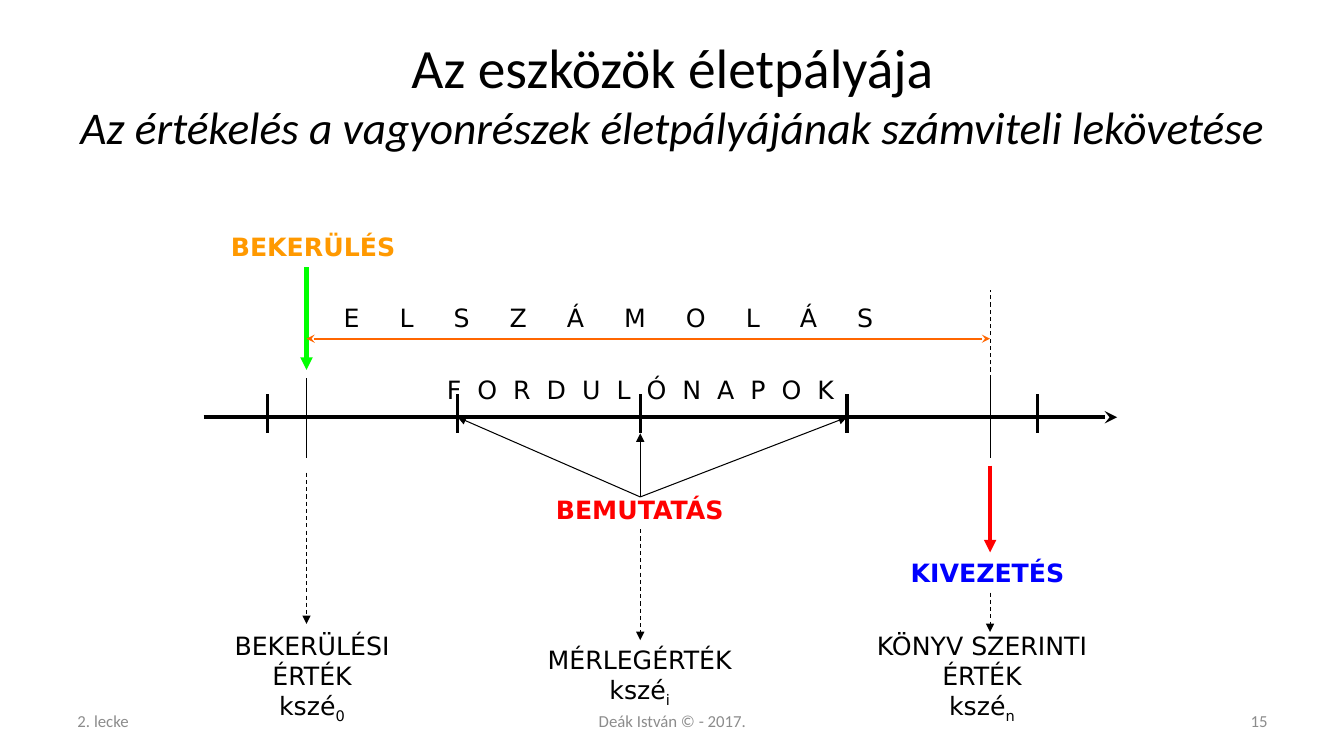
"""Builds a slide with the timeline of an asset and its valuation."""
import dataclasses

import lxml.etree
import pptx
import pptx.dml.color
import pptx.enum.dml
import pptx.enum.shapes
import pptx.enum.text
import pptx.oxml.ns
import pptx.util

Inches = pptx.util.Inches
Align = pptx.enum.text.PP_ALIGN
Anchor = pptx.enum.text.MSO_ANCHOR
qn = pptx.oxml.ns.qn


@dataclasses.dataclass(frozen=True)
class Theme:
    """Colours, fonts and type sizes."""
    black: str = "000000"
    grey: str = "8C8C8C"
    amber: str = "FF9900"
    orange: str = "FF6600"
    green: str = "00FF00"
    blue: str = "0000FF"
    red: str = "FF0000"
    head: str = "Calibri"
    body: str = "DejaVu Sans"
    title: float = 39.6
    sub: float = 32.4
    text: float = 18
    foot: float = 12
    thin: float = 0.75
    mid: float = 1.5
    tick: float = 2.25
    thick: float = 3


class Board:
    """Draws styled elements on one slide."""

    def __init__(self, deck, theme):
        self.theme = theme
        self.slide = deck.slides.add_slide(deck.slide_layouts[5])

    def style(self, para, font, size, tint, align, bold=False):
        """Formats a whole paragraph."""
        para.alignment = align
        para.font.name = font
        para.font.size = pptx.util.Pt(size)
        para.font.bold = bold
        para.font.color.rgb = pptx.dml.color.RGBColor.from_string(tint)

    def title(self, main, sub):
        """Fills the title placeholder with a heading and a subheading."""
        theme = self.theme
        shape = self.slide.shapes.title
        shape.left, shape.top = Inches(0.67), Inches(0.3)
        shape.width, shape.height = Inches(12), Inches(1.25)
        frame = shape.text_frame
        frame.word_wrap = True
        frame.auto_size = pptx.enum.text.MSO_AUTO_SIZE.NONE
        frame.vertical_anchor = Anchor.MIDDLE
        para = frame.paragraphs[0]
        self.style(para, theme.head, theme.title, theme.black, Align.CENTER)
        first = para.add_run()
        first.text = main
        first.font.size = pptx.util.Pt(theme.title)
        para.add_line_break()
        second = para.add_run()
        second.text = sub
        second.font.size = pptx.util.Pt(theme.sub)
        second.font.italic = True

    def box(self, left, top, width, height, wrap=False):
        """Adds an empty text box and returns its frame."""
        shape = self.slide.shapes.add_textbox(
            Inches(left), Inches(top), Inches(width), Inches(height))
        shape.text_frame.word_wrap = wrap
        return shape.text_frame

    def foot(self, left, width, text, align):
        """Adds one part of the footer."""
        theme = self.theme
        frame = self.box(left, 6.95, width, 0.4, wrap=True)
        frame.vertical_anchor = Anchor.MIDDLE
        para = frame.paragraphs[0]
        para.add_run().text = text
        self.style(para, theme.head, theme.foot, theme.grey, align)

    def label(self, left, top, width, text, tint):
        """Adds a bold stage name."""
        para = self.box(left, top, width, 0.4).paragraphs[0]
        para.add_run().text = text
        self.style(para, self.theme.body, self.theme.text, tint, Align.CENTER, True)

    def spread(self, left, top, width, word, gap, align):
        """Adds a word with wide letter spacing in points."""
        theme = self.theme
        para = self.box(left, top, width, 0.4, wrap=True).paragraphs[0]
        run = para.add_run()
        run.text = " ".join(word)
        run.font._element.set("spc", str(round(gap * 100)))
        self.style(para, theme.body, theme.text, theme.black, align)

    def value(self, left, top, width, lines, index):
        """Adds a value name over its indexed symbol."""
        theme = self.theme
        frame = self.box(left, top, width, 0.1 + 0.3 * (len(lines) + 1))
        for count, line in enumerate([*lines, "kszé"]):
            para = frame.add_paragraph() if count else frame.paragraphs[0]
            para.add_run().text = line
            self.style(para, theme.body, theme.text, theme.black, Align.CENTER)
        low = para.add_run()
        low.text = index
        low.font._element.set("baseline", "-25000")

    def line(self, start, end, tint=Theme.black, width=Theme.thin,
             head=None, tail=None, dash=False):
        """Adds a straight line with optional arrowheads."""
        link = self.slide.shapes.add_connector(
            pptx.enum.shapes.MSO_CONNECTOR.STRAIGHT,
            *(Inches(value) for value in (*start, *end)))
        link.line.color.rgb = pptx.dml.color.RGBColor.from_string(tint)
        link.line.width = pptx.util.Pt(width)
        if dash:
            link.line.dash_style = pptx.enum.dml.MSO_LINE.DASH
        props = link._element.spPr
        for tag, kind in (("a:headEnd", head), ("a:tailEnd", tail)):
            if kind:
                lxml.etree.SubElement(props.find(qn("a:ln")), qn(tag), type=kind)
        lxml.etree.SubElement(props, qn("a:effectLst"))


def main():
    """Builds and saves the slide."""
    deck = pptx.Presentation()
    deck.slide_width, deck.slide_height = Inches(13.33), Inches(7.5)
    theme = Theme()
    board = Board(deck, theme)
    entry, centre, leave, axis = 3.04, 6.35, 9.82, 4.14

    board.title("Az eszközök életpályája",
                "Az értékelés a vagyonrészek életpályájának számviteli lekövetése")
    board.foot(0.67, 3.11, "2. lecke", Align.LEFT)
    board.foot(4.56, 4.22, "Deák István © - 2017.", Align.CENTER)
    board.foot(9.56, 3.11, "15", Align.RIGHT)

    board.line((2.02, axis), (11.08, axis), width=theme.thick, tail="stealth")
    for x in (2.65, 4.54, centre, 8.4, 10.29):
        board.line((x, 3.91), (x, 4.3), width=theme.tick)
    for x in (entry, leave):
        board.line((x, 3.75), (x, 4.54))
    board.line((leave, 3.83), (leave, 2.88), dash=True)

    board.label(2.18, 2.25, 1.85, "BEKERÜLÉS", theme.amber)
    board.label(5.38, 4.85, 1.93, "BEMUTATÁS", theme.red)
    board.label(8.91, 5.48, 1.77, "KIVEZETÉS", theme.blue)
    board.spread(3.31, 2.95, 6.06, "ELSZÁMOLÁS", 11.44, Align.LEFT)
    board.spread(4.23, 3.66, 4.25, "FORDULÓNAPOK", 2.86, Align.CENTER)

    board.line((entry, 2.65), (entry, 3.67), theme.green, theme.thick, tail="triangle")
    board.line((leave, 4.62), (leave, 5.48), theme.red, theme.thick, tail="triangle")
    board.line((entry, 3.36), (leave, 3.36), theme.orange, theme.mid,
               head="stealth", tail="stealth")
    for end in ((4.54, axis), (centre, 4.3), (8.4, axis)):
        board.line((centre, 4.93), end, tail="triangle")

    for x, top, low in ((entry, 4.69, 6.19), (centre, 5.25, 6.35), (leave, 5.88, 6.27)):
        board.line((x, top), (x, low), tail="triangle", dash=True)
    board.value(2.2, 6.2, 1.79, ["BEKERÜLÉSI", "ÉRTÉK"], "0")
    board.value(5.32, 6.34, 2.05, ["MÉRLEGÉRTÉK"], "i")
    board.value(8.54, 6.2, 2.4, ["KÖNYV SZERINTI", "ÉRTÉK"], "n")

    deck.save("out.pptx")


if __name__ == "__main__":
    main()
